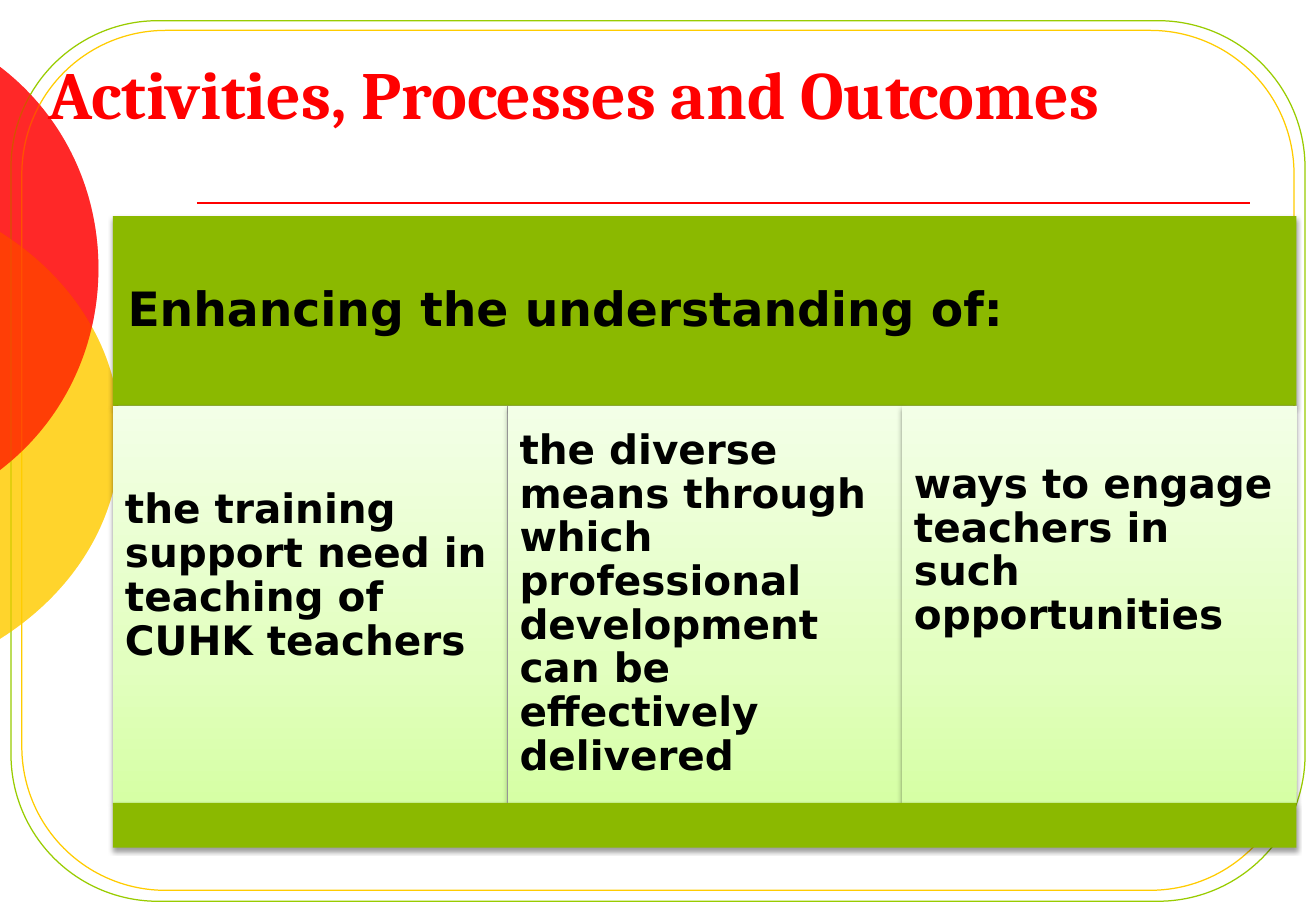
from copy import deepcopy

from lxml.etree import SubElement
from pptx import Presentation
from pptx.dml.color import RGBColor
from pptx.enum.shapes import MSO_CONNECTOR, MSO_SHAPE
from pptx.enum.text import MSO_ANCHOR, PP_ALIGN
from pptx.oxml.ns import qn
from pptx.util import Inches, Pt

RED = RGBColor(0xFF, 0x00, 0x00)
YELLOW = RGBColor(0xFF, 0xCC, 0x00)
LIME = RGBColor(0x99, 0xCC, 0x00)
GREEN = RGBColor(0x8B, 0xB9, 0x00)
BLACK = RGBColor(0x00, 0x00, 0x00)
FADE = [(0, RGBColor(0xD6, 0xFF, 0xA5)), (0.35, RGBColor(0xE2, 0xFF, 0xBF)),
        (1, RGBColor(0xF3, 0xFF, 0xE7))]

TITLE = "Activities, Processes and Outcomes"
HEADING = "Enhancing the understanding of:"
# text, extra space below it
COLUMNS = [
    ("the training support need in teaching of CUHK teachers", 0.46),
    ("the diverse means through which professional development can be "
     "effectively delivered", 0),
    ("ways to engage teachers in such opportunities", 0.88),
]
# colour, opacity in %, box of the whole disc, top and bottom at the slide edge
DISCS = [(YELLOW, 58, (-3.34, 1.58, 4.33, 4), 1.91, 5.26),
         (RED, 60, (-3.97, 0, 4.78, 4.42), 0.55, 3.87)]
FRAMES = [(LIME, (0.09, 0.17, 10.65, 7.25)), (YELLOW, (0.18, 0.25, 10.47, 7.08))]

SLIDE_W, SLIDE_H = 10.83, 7.5
PANEL_X, PANEL_Y, PANEL_W = 0.93, 1.78, 9.74
HEAD_H, BODY_H, FOOT_H = 1.56, 3.27, 0.37
TITLE_FONT = {"name": "Cambria", "size": Pt(40), "bold": True}
HEADING_FONT = {"name": "DejaVu Sans", "size": Pt(28), "bold": True}
BODY_FONT = {**HEADING_FONT, "size": Pt(24)}


def write(sp, text, font, color, inset, bottom, anchor=MSO_ANCHOR.MIDDLE, spacing=0.9):
    tf = sp.text_frame
    tf.word_wrap = True
    tf.vertical_anchor = anchor
    tf.margin_left = tf.margin_right = tf.margin_top = Inches(inset)
    tf.margin_bottom = Inches(bottom)
    p = tf.paragraphs[0]
    p.alignment = PP_ALIGN.LEFT
    p.line_spacing = spacing
    r = p.add_run()
    r.text = text
    for key, value in font.items():
        setattr(r.font, key, value)
    r.font.color.rgb = color


def add_disc(shapes, color, opacity, box, top, bottom):
    """Draw the slice of a disc that shows inside the slide's left edge."""
    x, y, w, h = box
    bulge, middle, half = x + w, (top + bottom) / 2, (bottom - top) / 2
    builder = shapes.build_freeform(0, Inches(top))
    builder.add_line_segments([(Inches(bulge), Inches(middle)), (0, Inches(bottom))])
    sp = builder.convert_to_shape()
    sp.left, sp.top, sp.width, sp.height = map(Inches, box)
    outline = next(sp._element.spPr.iter(qn("a:path")))
    outline.set("w", str(Inches(w)))
    outline.set("h", str(Inches(h)))
    for child in list(outline):
        outline.remove(child)

    def add_step(kind, *points):
        step = SubElement(outline, qn(f"a:{kind}"))
        for px, py in points:
            SubElement(step, qn("a:pt"), x=str(Inches(px - x)), y=str(Inches(py - y)))

    steep, shallow, reach = 0.4 * half, 0.235 * half, 0.63 * bulge
    add_step("moveTo", (0, top))
    add_step("cubicBezTo", (reach, top + shallow), (bulge, middle - steep), (bulge, middle))
    add_step("cubicBezTo", (bulge, middle + steep), (reach, bottom - shallow), (0, bottom))
    add_step("close")
    sp.shadow.inherit = False
    sp.fill.solid()
    sp.fill.fore_color.rgb = color
    sp.line.fill.background()
    clr = next(sp._element.spPr.iter(qn("a:srgbClr")))
    SubElement(clr, qn("a:alpha"), val=str(opacity * 1000))


def add_frame(shapes, color, box):
    sp = shapes.add_shape(MSO_SHAPE.ROUNDED_RECTANGLE, *map(Inches, box))
    sp.shadow.inherit = False
    sp.adjustments[0] = 0.167
    sp.fill.background()
    sp.line.color.rgb = color
    sp.line.width = Pt(0.75)


def add_block(shapes, x, y, w, h, faded=False):
    """Add a panel rectangle with a soft shadow below it."""
    sp = shapes.add_shape(MSO_SHAPE.RECTANGLE, *map(Inches, (x, y, w, h)))
    sp.line.fill.background()
    if faded:
        sp.fill.gradient()
        sp.fill.gradient_angle = 90
        stops = next(sp._element.spPr.iter(qn("a:gsLst")))
        stops.insert(1, deepcopy(stops[0]))
        for stop, (position, color) in zip(sp.fill.gradient_stops, FADE):
            stop.position = position
            stop.color.rgb = color
    else:
        sp.fill.solid()
        sp.fill.fore_color.rgb = GREEN
    sp.shadow.inherit = False
    effects = sp._element.spPr.find(qn("a:effectLst"))
    shadow = SubElement(effects, qn("a:outerShdw"), blurRad=str(Pt(3.1)),
                        dist=str(Pt(1.6)), dir="5400000", rotWithShape="0")
    clr = SubElement(shadow, qn("a:srgbClr"), val=str(BLACK))
    SubElement(clr, qn("a:alpha"), val="38000")
    return sp


def main():
    prs = Presentation()
    prs.slide_width, prs.slide_height = Inches(SLIDE_W), Inches(SLIDE_H)
    shapes = prs.slides.add_slide(prs.slide_layouts[6]).shapes

    for disc in DISCS:
        add_disc(shapes, *disc)
    for frame in FRAMES:
        add_frame(shapes, *frame)
    rule = shapes.add_connector(MSO_CONNECTOR.STRAIGHT,
                                *map(Inches, (1.62, 1.67, 10.29, 1.67)))
    rule.line.color.rgb = RED
    rule.line.width = Pt(1)
    SubElement(rule._element.spPr, qn("a:effectLst"))
    for disc in DISCS:
        add_disc(shapes, *disc)

    head = add_block(shapes, PANEL_X, PANEL_Y, PANEL_W, HEAD_H)
    write(head, HEADING, HEADING_FONT, BLACK, 0.12, 0.12)
    body_y = PANEL_Y + HEAD_H
    col_w = PANEL_W / len(COLUMNS)
    for i, (text, below) in enumerate(COLUMNS):
        cell = add_block(shapes, PANEL_X + i * col_w, body_y, col_w, BODY_H, faded=True)
        write(cell, text, BODY_FONT, BLACK, 0.1, 0.1 + below)
    add_block(shapes, PANEL_X, body_y + BODY_H, PANEL_W, FOOT_H)

    title = shapes.add_textbox(*map(Inches, (0.3, -0.11, 10.54, 1.25)))
    write(title, TITLE, TITLE_FONT, RED, 0.1, 0.05, MSO_ANCHOR.BOTTOM, 1.0)
    prs.save("out.pptx")


if __name__ == "__main__":
    main()
